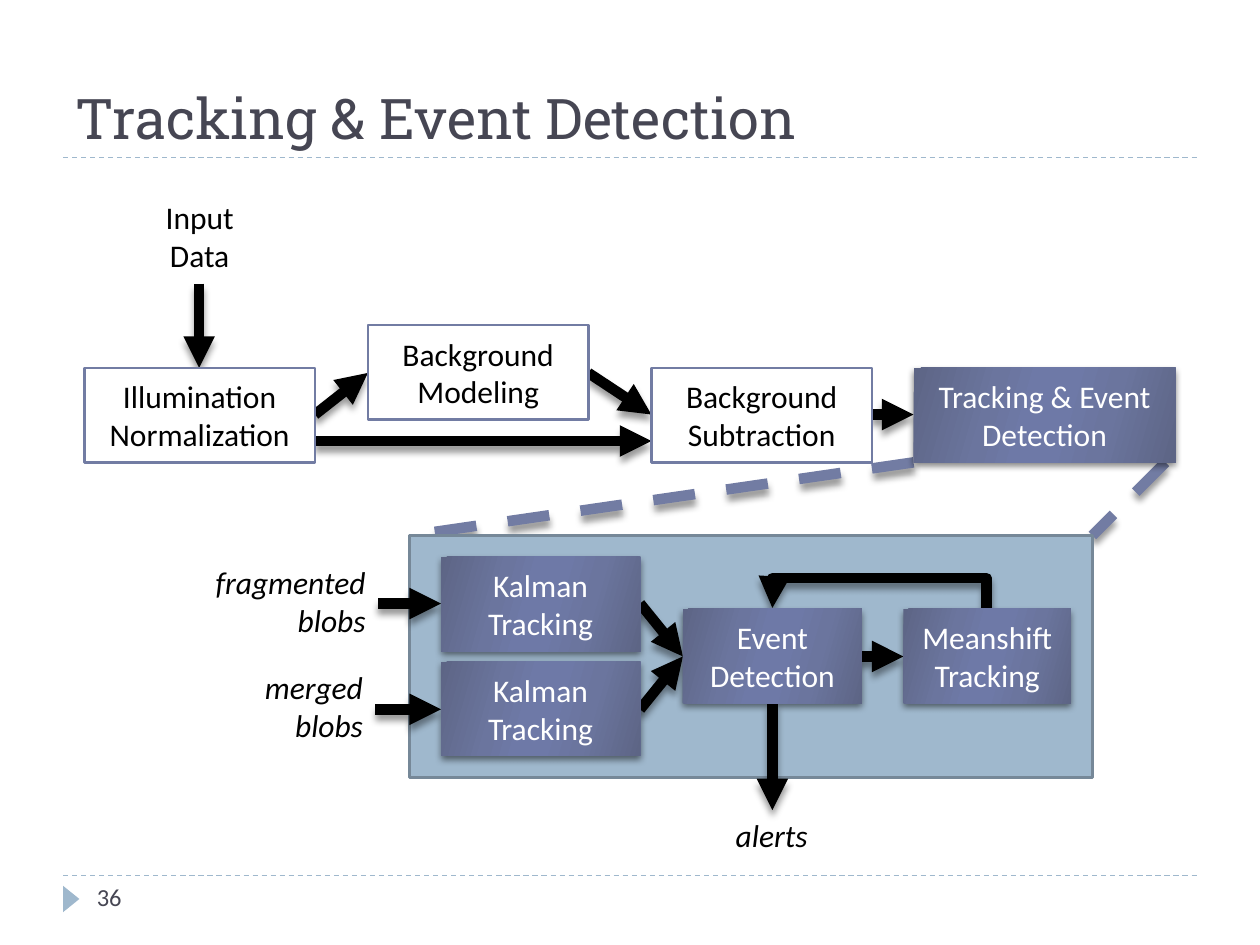
from dataclasses import dataclass

from lxml import etree
from pptx import Presentation
from pptx import util as u
from pptx.dml.color import RGBColor
from pptx.enum import dml, shapes, text
from pptx.oxml.ns import qn


@dataclass(frozen=True)
class Theme:
    heading_font: str = "Roboto Slab"
    body_font: str = "Calibri"
    title_size: int = 32
    body_size: int = 18
    number_size: int = 14
    ink: str = "000000"
    paper: str = "FFFFFF"
    muted: str = "464653"
    accent: str = "727CA3"
    pale: str = "9FB8CD"
    pale_edge: str = "768898"
    gradient: tuple = ((0, "5D6585"), (30, "6B759E"), (45, "6E79A7"),
                       (55, "6E79A7"), (73, "6B759E"), (100, "5D6585"))
    gradient_angle: int = 16


def child(parent, tag, **attributes):
    return etree.SubElement(parent, qn(tag),
                            {key: str(value) for key, value in attributes.items()})


def add_shadow(effects, opacity, distance):
    shadow = child(effects, "a:outerShdw", blurRad=u.Pt(4), dist=u.Pt(distance),
                   dir=90 * 60000, algn="ctr", rotWithShape=0)
    colour = child(shadow, "a:srgbClr", val="000000")
    child(colour, "a:alpha", val=opacity * 1000)


class SlideBuilder:
    def __init__(self, slide, theme):
        self.slide, self.theme = slide, theme

    def set_text(self, frame, words, size, color, align=None, italic=False,
                 font=None, anchor=text.MSO_ANCHOR.TOP, wrap=True):
        frame.text = words
        frame.word_wrap = wrap
        frame.vertical_anchor = anchor
        for paragraph in frame.paragraphs:
            paragraph.alignment = align
            paragraph.font.name = font or self.theme.body_font
            paragraph.font.size = u.Pt(size)
            paragraph.font.italic = italic
            paragraph.font.color.rgb = RGBColor.from_string(color)

    def title(self, words, *place):
        heading = self.slide.shapes.title
        heading.left, heading.top, heading.width, heading.height = map(u.Inches, place)
        heading.text_frame.auto_size = text.MSO_AUTO_SIZE.NONE
        self.set_text(heading.text_frame, words, self.theme.title_size, self.theme.muted,
                      text.PP_ALIGN.LEFT, font=self.theme.heading_font,
                      anchor=text.MSO_ANCHOR.BOTTOM)

    def label(self, words, place, align=text.PP_ALIGN.CENTER, size=None, color=None, **style):
        box = self.slide.shapes.add_textbox(*map(u.Inches, place))
        self.set_text(box.text_frame, words, size or self.theme.body_size,
                      color or self.theme.ink, align, **style)

    def shape(self, place, fill, edge=None, kind=shapes.MSO_SHAPE.RECTANGLE):
        item = self.slide.shapes.add_shape(kind, *map(u.Inches, place))
        item.shadow.inherit = False
        item.fill.solid()
        item.fill.fore_color.rgb = RGBColor.from_string(fill)
        if edge:
            item.line.color.rgb = RGBColor.from_string(edge)
            item.line.width = u.Pt(1.5)
        else:
            item.line.fill.background()
        return item

    def step(self, words, place, wrap=True):
        """Draw an outlined stage of the pipeline."""
        box = self.shape(place, self.theme.paper, self.theme.accent)
        self.set_text(box.text_frame, words, self.theme.body_size, self.theme.ink,
                      text.PP_ALIGN.CENTER, anchor=text.MSO_ANCHOR.MIDDLE, wrap=wrap)

    def tracker(self, words, place):
        """Draw a shaded stage that belongs to tracking and event detection."""
        box = self.shape(place, self.theme.accent)
        box.fill.gradient()
        box.fill.gradient_angle = 360 - self.theme.gradient_angle
        stops = box._element.spPr.find(".//" + qn("a:gsLst"))
        for old_stop in list(stops):
            stops.remove(old_stop)
        for position, color in self.theme.gradient:
            stop = child(stops, "a:gs", pos=position * 1000)
            child(stop, "a:srgbClr", val=color)
        add_shadow(box._element.spPr.find(qn("a:effectLst")), 50, 2)
        self.set_text(box.text_frame, words, self.theme.body_size, self.theme.paper,
                      text.PP_ALIGN.CENTER, anchor=text.MSO_ANCHOR.MIDDLE)

    def line(self, ends, color, width, dashed=False, arrow=False, shadow=True,
             kind=shapes.MSO_CONNECTOR.STRAIGHT):
        link = self.slide.shapes.add_connector(kind, *map(u.Inches, ends))
        link.line.color.rgb = RGBColor.from_string(color)
        link.line.width = u.Pt(width)
        if dashed:
            link.line.dash_style = dml.MSO_LINE.DASH
        if arrow:
            child(link._element.spPr.find(qn("a:ln")), "a:tailEnd", type="triangle")
        effects = child(link._element.spPr, "a:effectLst")
        if shadow:
            add_shadow(effects, 40, 3.4)
        return link

    def arrow(self, *ends, **options):
        return self.line(ends, self.theme.ink, 6, arrow=True, **options)

    def loop_back(self, right, left, base, rise):
        """Draw an arrow up from right, across, and down to left at the same base."""
        middle, half, depth = (left + right) / 2, (right - left) / 2, 0.01
        link = self.arrow(middle - depth / 2, base + half, middle + depth / 2, base - half,
                          kind=shapes.MSO_CONNECTOR.ELBOW)
        properties = link._element.spPr
        properties.find(qn("a:xfrm")).set("rot", str(270 * 60000))
        geometry = properties.find(qn("a:prstGeom"))
        guides = geometry.find(qn("a:avLst"))
        if guides is None:
            guides = child(geometry, "a:avLst")
        child(guides, "a:gd", name="adj1", fmla=f"val {round(rise / depth * 100000)}")


def main():
    deck = Presentation()
    deck.slide_width, deck.slide_height = u.Inches(10), u.Inches(7.5)
    theme = Theme()
    page = SlideBuilder(deck.slides.add_slide(deck.slide_layouts[5]), theme)

    for rule_y in (6.95, 1.25):
        page.line((0.5, rule_y, 9.5, rule_y), theme.pale, 0.75, dashed=True, shadow=False)
    marker = page.shape((0.46, 7.07, 0.21, 0.13), theme.pale,
                        kind=shapes.MSO_SHAPE.ISOSCELES_TRIANGLE)
    marker.rotation = 90
    page.title("Tracking & Event Detection", 0.5, 0.17, 9, 1.08)
    page.label("36", (0.67, 6.95, 2.17, 0.4), text.PP_ALIGN.LEFT,
               theme.number_size, theme.muted)

    for zoom_edge in ((7.25, 3.67, 3.25, 4.25), (9.25, 3.67, 8.67, 4.25)):
        page.line(zoom_edge, theme.accent, 6, dashed=True)
    page.shape((3.25, 4.25, 5.42, 1.92), theme.pale, theme.pale_edge)

    for flow in (
        (1.58, 2.25, 1.58, 2.92), (2.5, 3.29, 2.92, 2.96), (4.67, 2.96, 5.17, 3.29),
        (2.5, 3.5, 5.17, 3.5), (6.92, 3.29, 7.25, 3.29), (3, 4.79, 3.5, 4.79),
        (2.98, 5.63, 3.5, 5.63), (5.08, 4.79, 5.42, 5.21), (5.08, 5.63, 5.42, 5.21),
        (6.83, 5.21, 7.17, 5.21), (6.13, 5.58, 6.13, 6.43),
    ):
        page.arrow(*flow)
    page.loop_back(right=7.83, left=6.13, base=4.83, rise=0.25)

    height = 0.75
    page.step("Illumination\nNormalization", (0.67, 2.92, 1.83, height), wrap=False)
    page.step("Background\nModeling", (2.92, 2.58, 1.75, height), wrap=False)
    page.step("Background Subtraction", (5.17, 2.92, 1.75, height))
    for words, left, top, width in (
        ("Tracking & Event Detection", 7.25, 2.92, 2.08),
        ("Kalman Tracking", 3.5, 4.42, 1.58),
        ("Kalman Tracking", 3.5, 5.25, 1.58),
        ("Meanshift Tracking", 7.17, 4.83, 1.33),
        ("Event Detection", 5.42, 4.83, 1.42),
    ):
        page.tracker(words, (left, top, width, height))

    page.label("Input Data", (1, 1.5, 1.17, height), anchor=text.MSO_ANCHOR.MIDDLE)
    page.label("fragmented blobs", (1.33, 4.42, 1.67, height),
               text.PP_ALIGN.RIGHT, italic=True)
    page.label("merged\vblobs", (1.92, 5.25, 1.06, height),
               text.PP_ALIGN.RIGHT, italic=True, wrap=False)
    page.label("alerts", (5.5, 6.43, 1.25, 0.4), italic=True)

    deck.save("out.pptx")


if __name__ == "__main__":
    main()
